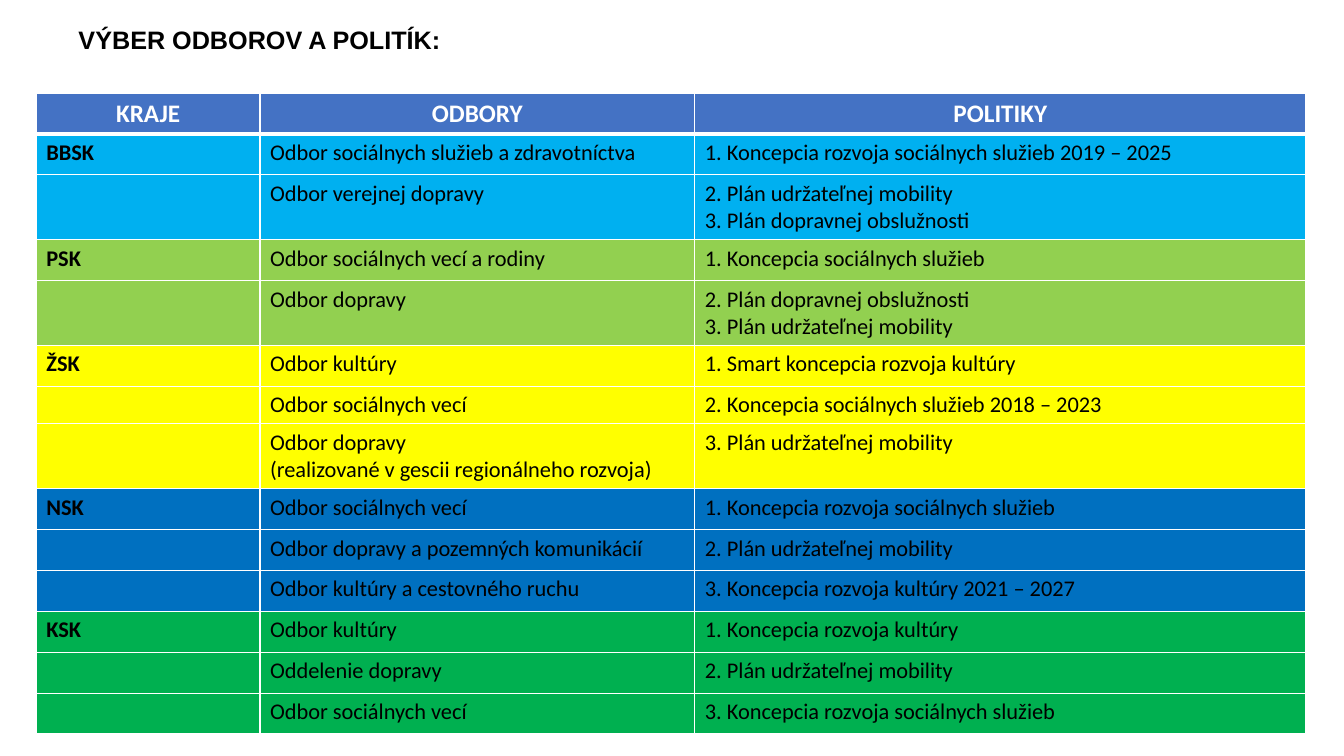
import lxml.etree
import pptx
import pptx.dml.color
import pptx.enum.text
import pptx.oxml.ns
import pptx.util

Pt = pptx.util.Pt
qn = pptx.oxml.ns.qn

HEADINGS = ("KRAJE", "ODBORY", "POLITIKY")
REGIONS = [
    ("BBSK", "00B0F0", [
        ("Odbor sociálnych služieb a zdravotníctva",
         "1. Koncepcia rozvoja sociálnych služieb 2019 – 2025"),
        ("Odbor verejnej dopravy",
         "2. Plán udržateľnej mobility\n3. Plán dopravnej obslužnosti"),
    ]),
    ("PSK", "92D050", [
        ("Odbor sociálnych vecí a rodiny", "1. Koncepcia sociálnych služieb"),
        ("Odbor dopravy",
         "2. Plán dopravnej obslužnosti\n3. Plán udržateľnej mobility"),
    ]),
    ("ŽSK", "FFFF00", [
        ("Odbor kultúry", "1. Smart koncepcia rozvoja kultúry"),
        ("Odbor sociálnych vecí", "2. Koncepcia sociálnych služieb 2018 – 2023"),
        ("Odbor dopravy\n(realizované v gescii regionálneho rozvoja)",
         "3. Plán udržateľnej mobility"),
    ]),
    ("NSK", "0070C0", [
        ("Odbor sociálnych vecí", "1. Koncepcia rozvoja sociálnych služieb"),
        ("Odbor dopravy a pozemných komunikácií", "2. Plán udržateľnej mobility"),
        ("Odbor kultúry a cestovného ruchu",
         "3. Koncepcia rozvoja kultúry 2021 – 2027"),
    ]),
    ("KSK", "00B050", [
        ("Odbor kultúry", "1. Koncepcia rozvoja kultúry"),
        ("Oddelenie dopravy", "2. Plán udržateľnej mobility"),
        ("Odbor sociálnych vecí", "3. Koncepcia rozvoja sociálnych služieb"),
    ]),
]
COLUMN_WIDTHS = (159.8, 310.6, 436.6)
ROW_HEIGHT, TWO_LINE_HEIGHT, COMPACT_HEIGHT = 29.2, 46.3, 26.3
COMPACT_ROW = 6


def rgb(value):
    return pptx.dml.color.RGBColor.from_string(value)


def format_text(frame, size, color, bold, font, align=None):
    for paragraph in frame.paragraphs:
        paragraph.alignment = align
        for run in paragraph.runs:
            run.font.size = Pt(size)
            run.font.name = font
            run.font.bold = bold
            run.font.color.rgb = rgb(color)
        if not paragraph.runs:
            lxml.etree.SubElement(
                paragraph._p, qn("a:endParaRPr"), sz=str(size * 100))


def add_borders(cell, top, bottom):
    properties = cell._tc.get_or_add_tcPr()
    for side, width in (("L", 1), ("R", 1), ("T", top), ("B", bottom)):
        line = lxml.etree.SubElement(
            properties, qn("a:ln" + side), w=str(Pt(width)))
        fill = lxml.etree.SubElement(line, qn("a:solidFill"))
        lxml.etree.SubElement(fill, qn("a:srgbClr"), val="FFFFFF")


def fill_cell(cell, text, fill, size, color, bold, align=None, top=1, bottom=1):
    cell.text_frame.text = text
    format_text(cell.text_frame, size, color, bold, "Calibri", align)
    add_borders(cell, top, bottom)
    cell.fill.solid()
    cell.fill.fore_color.rgb = rgb(fill)


def add_title(slide, text):
    title = slide.shapes.add_textbox(Pt(49), Pt(13.7), Pt(868.3), Pt(29.1))
    title.text_frame.word_wrap = True
    title.text_frame.auto_size = pptx.enum.text.MSO_AUTO_SIZE.SHAPE_TO_FIT_TEXT
    title.text_frame.text = text
    format_text(title.text_frame, 18, "000000", True, "Arial")


def row_height(index, texts):
    if any("\n" in text for text in texts):
        return TWO_LINE_HEIGHT
    return COMPACT_HEIGHT if index == COMPACT_ROW else ROW_HEIGHT


def add_policy_table(slide):
    policies = [
        (fill, (region if first == 0 else "", department, policy))
        for region, fill, entries in REGIONS
        for first, (department, policy) in enumerate(entries)
    ]
    heights = [ROW_HEIGHT] + [
        row_height(index, texts) for index, (_, texts) in enumerate(policies, 1)]
    table = slide.shapes.add_table(
        len(heights), len(HEADINGS), Pt(25.9), Pt(66.5),
        Pt(sum(COLUMN_WIDTHS)), Pt(sum(heights))).table
    table.horz_banding = False
    for column, width in zip(table.columns, COLUMN_WIDTHS):
        column.width = Pt(width)
    for row, height in zip(table.rows, heights):
        row.height = Pt(height)
    for column, heading in enumerate(HEADINGS):
        fill_cell(table.cell(0, column), heading, "4472C4", 18, "FFFFFF", True,
                  pptx.enum.text.PP_ALIGN.CENTER, bottom=3)
    for index, (fill, texts) in enumerate(policies, 1):
        for column, text in enumerate(texts):
            fill_cell(table.cell(index, column), text, fill, 16, "000000",
                      column == 0, top=3 if index == 1 else 1)


def main():
    presentation = pptx.Presentation()
    presentation.slide_width = Pt(960)
    presentation.slide_height = Pt(540)
    slide = presentation.slides.add_slide(presentation.slide_layouts[6])
    add_policy_table(slide)
    add_title(slide, "VÝBER ODBOROV A POLITÍK:")
    presentation.save("out.pptx")


if __name__ == "__main__":
    main()
